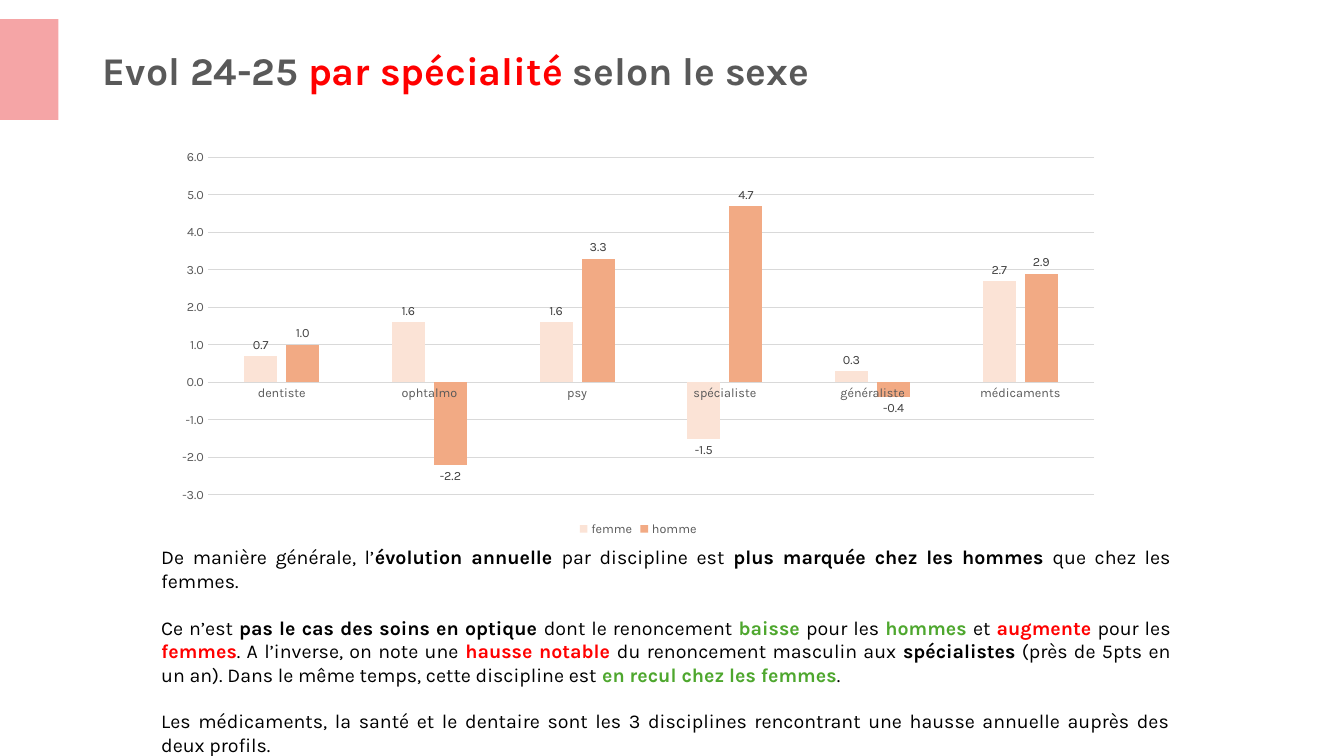
from lxml import etree
from pptx import Presentation
from pptx.chart.data import CategoryChartData
from pptx.dml.color import RGBColor
from pptx.enum import chart as ch, shapes, text
from pptx.oxml import ns
from pptx.util import Emu, Pt

FONT = "Karla"
BLACK, GREY, RED, GREEN = "000000", "595959", "FF0000", "4EA72E"
GRID, LABEL = "D9D9D9", "404040"

SPECIALTIES = ["dentiste", "ophtalmo", "psy", "spécialiste", "généraliste", "médicaments"]
SEXES = [
    ("femme", "FBE3D6", [0.7, 1.6, 1.6, -1.5, 0.3, 2.7]),
    ("homme", "F2AA84", [1.0, -2.2, 3.3, 4.7, -0.4, 2.9]),
]
TITLE = [("Evol 24-25 ", GREY), ("par spécialité ", RED), ("selon le sexe", GREY)]

# Plain strings are regular text; pairs are bold text with its colour.
COMMENTS = [
    ["De manière générale, l’", ("évolution annuelle ", BLACK), "par discipline est ",
     ("plus marquée chez les hommes ", BLACK), "que chez les femmes."],
    ["Ce n’est ", ("pas le cas des soins en optique ", BLACK), "dont le renoncement ",
     ("baisse ", GREEN), "pour les ", ("hommes ", GREEN), "et ", ("augmente ", RED),
     "pour les ", ("femmes", RED), ". A l’inverse, on note une ", ("hausse notable ", RED),
     "du renoncement masculin aux ", ("spécialistes", BLACK),
     " (près de 5pts en un an). Dans le même temps, cette discipline est ",
     ("en recul chez les femmes", GREEN), "."],
    ["Les médicaments, la santé et le dentaire sont les 3 disciplines rencontrant "
     "une hausse annuelle auprès des deux profils."],
]


def px(length):
    """Convert px, at 100 to the inch, to EMU."""
    return Emu(length * 9144)


def rgb(colour):
    return RGBColor.from_string(colour)


def set_font(font, size, colour):
    font.name, font.size = FONT, Pt(size)
    font.color.rgb = rgb(colour)


def add_runs(paragraph, parts):
    for part in parts:
        wording, colour = (part, None) if isinstance(part, str) else part
        run = paragraph.add_run()
        run.text = wording
        if colour:
            run.font.bold = True
            run.font.color.rgb = rgb(colour)


def place_title(slide, x, y, width, height):
    title = slide.shapes.title
    title.left, title.top, title.width, title.height = map(px, (x, y, width, height))
    frame = title.text_frame
    frame.vertical_anchor = text.MSO_ANCHOR.MIDDLE
    frame.margin_bottom = px(65)
    heading = frame.paragraphs[0]
    heading.alignment = text.PP_ALIGN.LEFT
    heading.line_spacing = 0.9
    set_font(heading.font, 28, GREY)
    add_runs(heading, TITLE)


def add_evolution_chart(slide, x, y, width, height):
    data = CategoryChartData(number_format="0.0")
    data.categories = SPECIALTIES
    for sex, _, changes in SEXES:
        data.add_series(sex, changes)
    chart = slide.shapes.add_chart(
        ch.XL_CHART_TYPE.COLUMN_CLUSTERED, *map(px, (x, y, width, height)), data).chart
    set_font(chart.font, 10, BLACK)
    chart.has_title = False
    chart.has_legend = True
    chart.legend.position = ch.XL_LEGEND_POSITION.BOTTOM
    chart.legend.include_in_layout = False
    set_font(chart.legend.font, 9, GREY)

    for axis in (chart.category_axis, chart.value_axis):
        axis.major_tick_mark = axis.minor_tick_mark = ch.XL_TICK_MARK.NONE
        set_font(axis.tick_labels.font, 9, GREY)
    points = chart.value_axis
    points.minimum_scale, points.maximum_scale, points.major_unit = -3, 6, 1
    points.tick_labels.number_format = "0.0"
    points.tick_labels.number_format_is_linked = False
    points.format.line.fill.background()
    for line in (chart.category_axis.format.line, points.major_gridlines.format.line):
        line.color.rgb = rgb(GRID)
        line.width = Pt(0.75)

    plot = chart.plots[0]
    plot.gap_width, plot.overlap = 219, -27
    plot.vary_by_categories = False
    for series, (_, colour, _) in zip(plot.series, SEXES):
        series.invert_if_negative = False
        series.format.fill.solid()
        series.format.fill.fore_color.rgb = rgb(colour)
        labels = series.data_labels
        labels.show_value = True
        labels.position = ch.XL_LABEL_POSITION.OUTSIDE_END
        labels.number_format = "0.0"
        labels.number_format_is_linked = False
        set_font(labels.font, 9, LABEL)


def add_comments(slide, x, y, width, height):
    frame = slide.shapes.add_textbox(*map(px, (x, y, width, height))).text_frame
    frame.word_wrap = True
    frame.auto_size = text.MSO_AUTO_SIZE.SHAPE_TO_FIT_TEXT
    for index, parts in enumerate(COMMENTS):
        comment = frame.add_paragraph() if index else frame.paragraphs[0]
        comment.alignment = text.PP_ALIGN.JUSTIFY
        comment.space_before = Pt(16.5 if index else 0)
        set_font(comment.font, 14, BLACK)
        add_runs(comment, parts)


def add_accent(slide, x, y, width, height):
    accent = slide.shapes.add_shape(
        shapes.MSO_SHAPE.RECTANGLE, *map(px, (x, y, width, height)))
    accent.shadow.inherit = False
    accent.line.fill.background()
    accent.fill.solid()
    accent.fill.fore_color.rgb = rgb("E51517")
    colour = accent.fill._xPr.find(".//" + ns.qn("a:srgbClr"))
    etree.SubElement(colour, ns.qn("a:alpha"), val="38000")


def main():
    deck = Presentation()
    deck.slide_width, deck.slide_height = px(1333), px(750)
    slide = deck.slides.add_slide(deck.slide_layouts.get_by_name("Title Only"))
    place_title(slide, 92, 20, 1150, 165)
    add_evolution_chart(slide, 162, 141, 942, 395)
    add_comments(slide, 150, 536, 1021, 259)
    add_accent(slide, 0, 19, 58, 100)
    deck.save("out.pptx")


if __name__ == "__main__":
    main()
